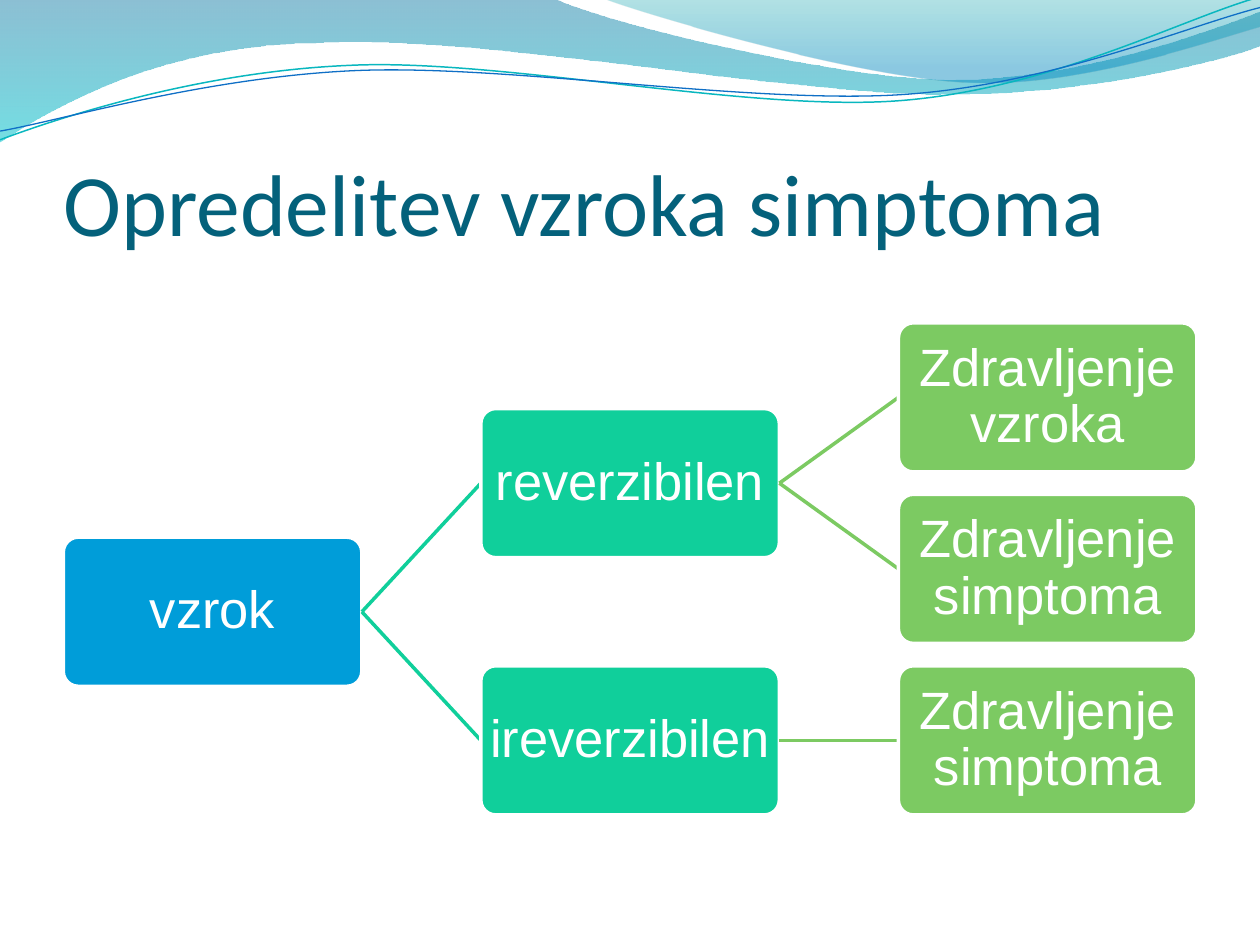
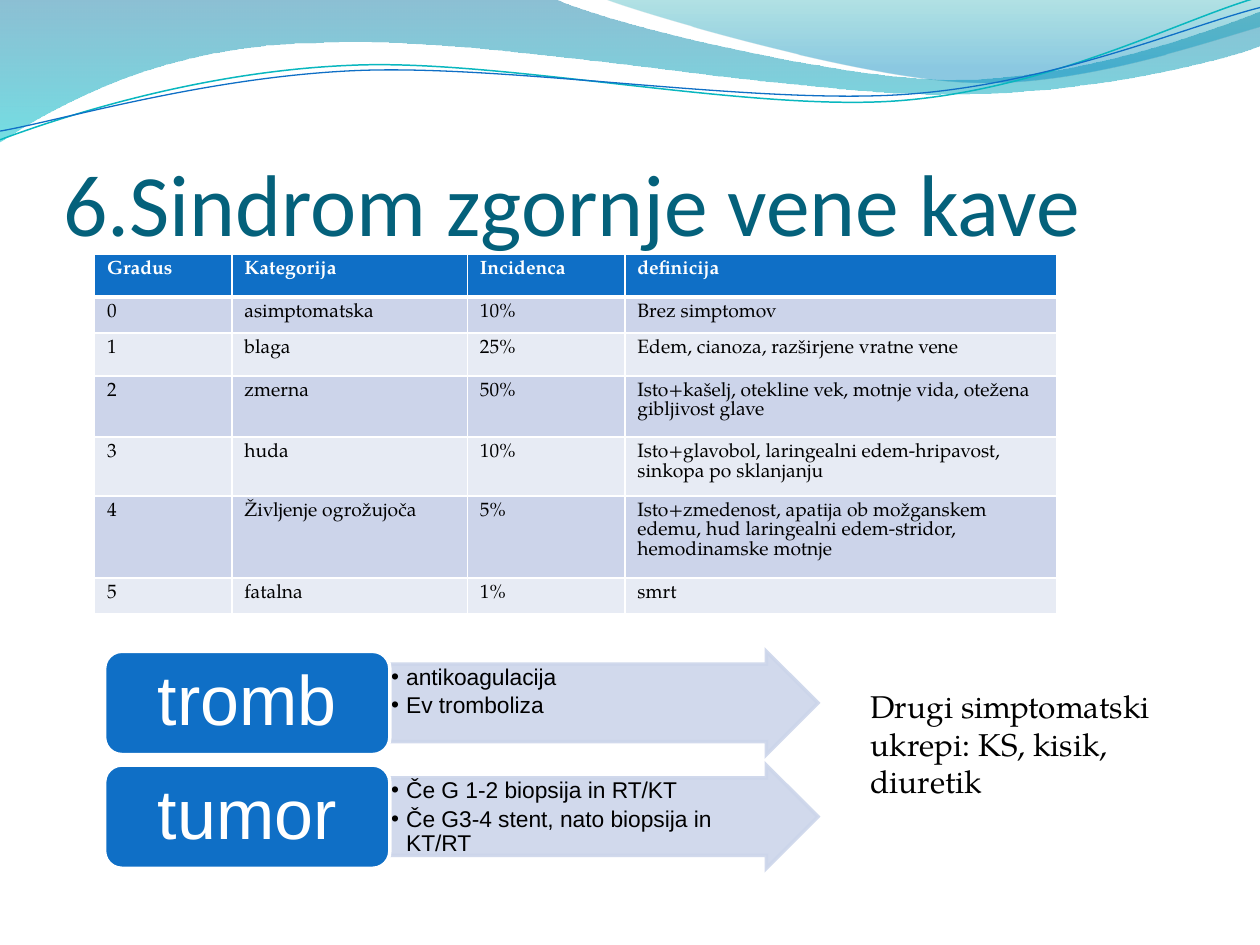
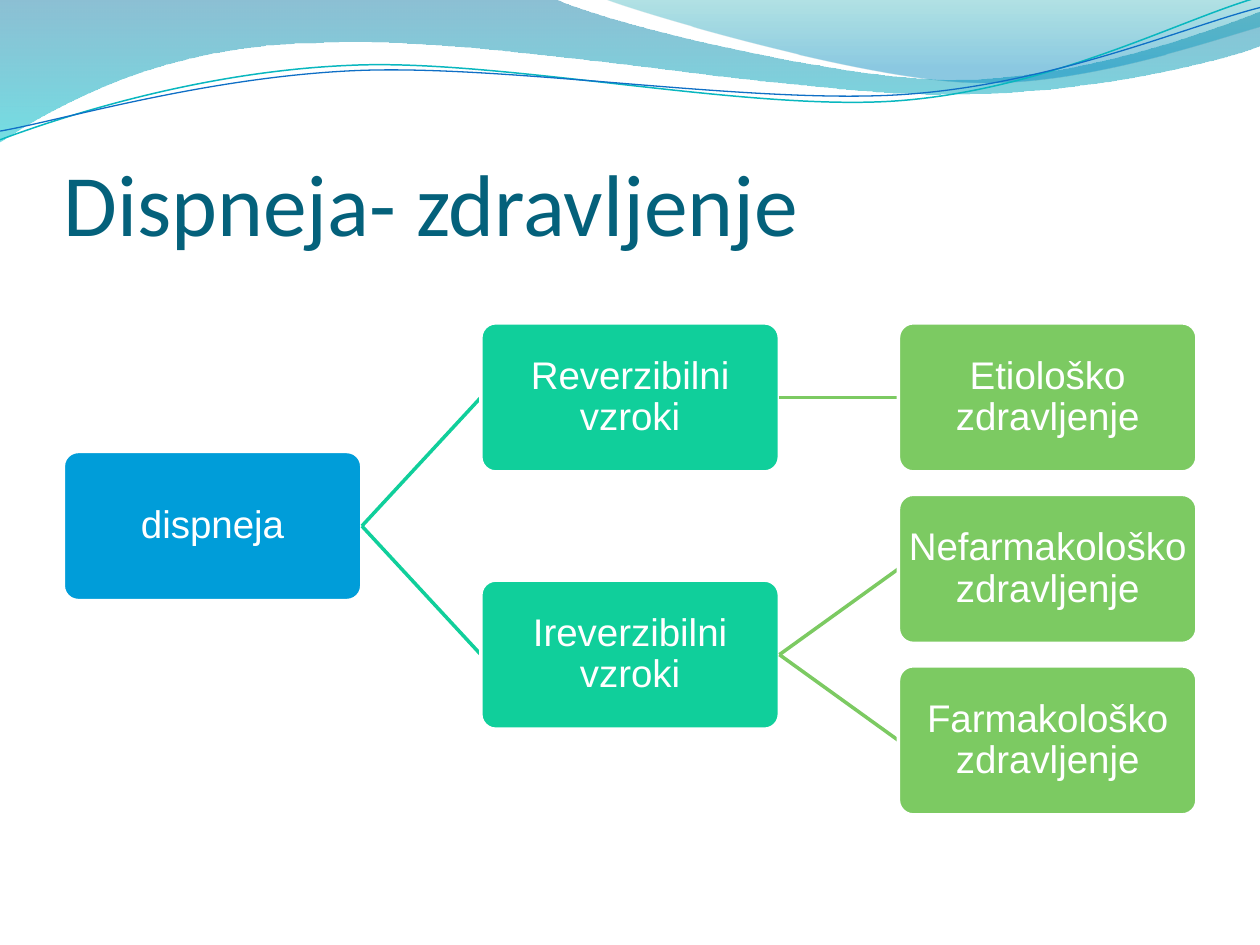
from dataclasses import dataclass

from lxml.etree import Element, SubElement
from pptx import Presentation
from pptx.dml.color import RGBColor
from pptx.enum.shapes import MSO_CONNECTOR, MSO_SHAPE
from pptx.enum.text import MSO_ANCHOR, PP_ALIGN
from pptx.oxml.ns import qn
from pptx.util import Pt


@dataclass(frozen=True)
class Theme:
    white: str = "FFFFFF"
    black: str = "000000"
    title: str = "04617B"
    blue: str = "0F6FC6"
    teal_line: str = "09B7BF"
    levels: tuple = ("009DD9", "10CF9B", "7CCA62")
    stripes: tuple = ("CCD4EA", "E7EBF4")
    arrow: str = "CCD5EA"
    title_font: str = "Calibri"
    body_font: str = "TeX Gyre Pagella"
    diagram_font: str = "Arial"
    title_size: float = 50
    table_size: float = 11
    note_size: float = 18
    cause_size: float = 40
    step_size: float = 13


THEME = Theme()

# A segment with one point is a straight line, with three points a Bézier curve.
BANDS = [
    {"start": (0, 0),
     "segments": [
         [(316.8, -0.7)],
         [(342.7, 12.2), (478.1, 45.4), (545.8, 45.4)],
         [(614.2, 45.4), (689.8, 18.7), (720, 6.5)],
         [(720.7, 25.9)],
         [(707.8, 31.7), (626.4, 54.7), (537.1, 54)],
         [(447.8, 54), (275, 20.2), (185, 24.5)],
         [(92.9, 25.2), (33.1, 59.8), (-0.7, 81.4)],
         [(0, 0)]],
     "stops": [(0, "0074A0", 45), (1, "00C4CD", 55)], "angle": 270},
    {"start": (344.9, -0.7),
     "segments": [
         [(366.5, 7.9), (491, 44.6), (553.7, 46.8)],
         [(616.3, 49.7), (691.9, 23), (720, 15.1)],
         [(720, 0)],
         [(344.9, -0.7)]],
     "stops": [(0.2, "008ABF", 45), (1, "00A0A8", 30)], "angle": 90},
]
RIPPLES = [
    {"start": (0, 79.9),
     "segments": [
         [(34.6, 67), (113.8, 41), (199.4, 37.4)],
         [(284.4, 33.1), (427, 64.1), (513.4, 57.6)],
         [(599.8, 51.1), (675.4, 10.8), (718.6, -1.4)]],
     "color": THEME.teal_line, "width": 0.85},
    {"start": (0, 74.9),
     "segments": [
         [(33.8, 69.1), (118.1, 43.9), (203.8, 40.3)],
         [(290.2, 36.7), (429.8, 59.8), (516.2, 54)],
         [(601.9, 48.2), (677.5, 15.1), (720, 4.3)]],
     "color": THEME.blue, "width": 0.75},
]

SYMPTOM_TREE = ("vzrok", [
    ("reverzibilen", ["Zdravljenje vzroka", "Zdravljenje simptoma"]),
    ("ireverzibilen", ["Zdravljenje simptoma"]),
])
DYSPNEA_TREE = ("dispneja", [
    ("Reverzibilni vzroki", ["Etiološko zdravljenje"]),
    ("Ireverzibilni vzroki", ["Nefarmakološko zdravljenje", "Farmakološko zdravljenje"]),
])
GRADES = [
    ("Gradus", "Kategorija", "Incidenca", "definicija"),
    ("0", "asimptomatska", "10%", "Brez simptomov"),
    ("1", "blaga", "25%", "Edem, cianoza, razširjene vratne vene"),
    ("2", "zmerna", "50%", "Isto+kašelj, otekline vek, motnje vida, otežena gibljivost glave"),
    ("3", "huda", "10%", "Isto+glavobol, laringealni edem-hripavost, sinkopa po sklanjanju"),
    ("4", "Življenje ogrožujoča", "5%",
     "Isto+zmedenost, apatija ob možganskem edemu, hud laringealni edem-stridor, "
     "hemodinamske motnje"),
    ("5", "fatalna", "1%", "smrt"),
]
GRADE_WIDTHS = [78.5, 134.6, 90, 247]
GRADE_HEIGHTS = [24.3, 18.2, 24.5, 35.1, 29.7, 45.4, 18]
CAUSES = [
    ("tromb", ["antikoagulacija", "Ev tromboliza"]),
    ("tumor", ["Če G 1-2 biopsija in RT/KT", "Če G3-4 stent, nato biopsija in KT/RT"]),
]
OTHER_MEASURES = "Drugi simptomatski ukrepi: KS, kisik, diuretik"

NODE_WIDTH, NODE_HEIGHT = 170.6, 85.2
TREE_LEFT, TREE_TOP = 36.2, 184.5
COLUMN_STEP, ROW_STEP = 238.6, 98


def rgb(color):
    return RGBColor.from_string(color)


def set_opacity(shape, percents):
    """Give the shape's colours, in document order, these opacities."""
    colors = shape._element.spPr.iter(qn("a:srgbClr"))
    for color, percent in zip(list(colors), percents):
        SubElement(color, qn("a:alpha"), val=str(percent * 1000))


def write_text(frame, lines, font, size, color, align=None, anchor=MSO_ANCHOR.TOP,
               insets=(7.2, 3.6, 7.2, 3.6), spacing=None, bullets=False):
    frame.word_wrap = True
    frame.vertical_anchor = anchor
    (frame.margin_left, frame.margin_top,
     frame.margin_right, frame.margin_bottom) = map(Pt, insets)
    for index, line in enumerate(lines):
        para = frame.add_paragraph() if index else frame.paragraphs[0]
        para.text = line
        para.alignment = align
        para.line_spacing = spacing
        if bullets:
            properties = para._p.get_or_add_pPr()
            properties.set("marL", str(Pt(8.6)))
            properties.set("indent", str(Pt(-8.6)))
            SubElement(properties, qn("a:buFont"), typeface=font)
            SubElement(properties, qn("a:buChar"), char="•")
            para.space_after = Pt(2)
        para.font.name = font
        para.font.size = Pt(size)
        para.font.color.rgb = rgb(color)


def add_text(page, place, lines, *style, **options):
    box = page.shapes.add_textbox(*map(Pt, place))
    write_text(box.text_frame, lines, *style, **options)


def add_block(page, kind, place, fill, line, adjustments=()):
    """Add a preset shape with a plain fill and a 2 pt mitred outline."""
    block = page.shapes.add_shape(kind, *map(Pt, place))
    block.shadow.inherit = False
    for index, value in enumerate(adjustments):
        block.adjustments[index] = value
    block.fill.solid()
    block.fill.fore_color.rgb = rgb(fill)
    block.line.color.rgb = rgb(line)
    block.line.width = Pt(2)
    SubElement(block.line._get_or_add_ln(), qn("a:miter"), lim="800000")
    return block


def add_outline(page, start, segments, close):
    """Draw straight steps between the end points, then bend the curved ones."""
    builder = page.shapes.build_freeform(*map(Pt, start))
    ends = [tuple(map(Pt, segment[-1])) for segment in segments]
    builder.add_line_segments(ends, close=close)
    outline = builder.convert_to_shape()
    outline.shadow.inherit = False
    steps = list(outline._element.spPr.iter(qn("a:lnTo")))
    for step, (*controls, _) in zip(steps, segments):
        if controls:
            step.tag = qn("a:cubicBezTo")
        for index, (x, y) in enumerate(controls):
            step.insert(index, Element(qn("a:pt"), x=str(Pt(x) - outline.left),
                                       y=str(Pt(y) - outline.top)))
    return outline


def add_waves(page):
    for band in BANDS:
        wave = add_outline(page, band["start"], band["segments"], True)
        wave.line.fill.background()
        wave.fill.gradient()
        wave.fill.gradient_angle = band["angle"]
        for stop, (position, color, _) in zip(wave.fill.gradient_stops, band["stops"]):
            stop.position = position
            stop.color.rgb = rgb(color)
        set_opacity(wave, [opacity for _, _, opacity in band["stops"]])
    for ripple in RIPPLES:
        wave = add_outline(page, ripple["start"], ripple["segments"], False)
        wave.fill.background()
        wave.line.color.rgb = rgb(ripple["color"])
        wave.line.width = Pt(ripple["width"])


def move_to_master(deck, page):
    """Hand the page's shapes to the slide master, so that every page shows them."""
    tree = deck.slide_master.shapes._spTree
    for index, shape in enumerate(list(page.shapes)):
        tree.insert(2 + index, shape._element)


def add_page(deck, title):
    page = deck.slides.add_slide(deck.slide_layouts[6])
    if len(deck.slides) == 1:
        add_waves(page)
        move_to_master(deck, page)
    add_text(page, (36.2, 55.4, 648, 90), [title], THEME.title_font, THEME.title_size,
             THEME.title, anchor=MSO_ANCHOR.BOTTOM, insets=(0, 3.6, 0, 0))
    return page


def add_node(page, text, level, row, size, parent_row=None):
    left = TREE_LEFT + level * COLUMN_STEP
    top = TREE_TOP + row * ROW_STEP
    color = THEME.levels[level]
    if parent_row is not None:
        middle = TREE_TOP + NODE_HEIGHT / 2
        link = page.shapes.add_connector(
            MSO_CONNECTOR.STRAIGHT,
            Pt(left - COLUMN_STEP + NODE_WIDTH), Pt(middle + parent_row * ROW_STEP),
            Pt(left), Pt(middle + row * ROW_STEP))
        link.line.color.rgb = rgb(color)
        link.line.width = Pt(2)
        SubElement(link._element.spPr, qn("a:effectLst"))
    node = add_block(page, MSO_SHAPE.ROUNDED_RECTANGLE, (left, top, NODE_WIDTH, NODE_HEIGHT),
                     color, THEME.white, [0.1])
    write_text(node.text_frame, [text], THEME.diagram_font, size, THEME.white,
               PP_ALIGN.CENTER, MSO_ANCHOR.MIDDLE, (1.4,) * 4, 0.9)


def add_tree(page, tree, size):
    """Place leaves on successive rows and centre each parent on its children."""
    root, branches = tree
    branch_rows, first_row = [], 0
    for _, leaves in branches:
        branch_rows.append(first_row + (len(leaves) - 1) / 2)
        first_row += len(leaves)
    root_row = sum(branch_rows) / len(branch_rows)
    add_node(page, root, 0, root_row, size)
    leaf_row = 0
    for (branch, leaves), branch_row in zip(branches, branch_rows):
        add_node(page, branch, 1, branch_row, size, root_row)
        for leaf in leaves:
            add_node(page, leaf, 2, leaf_row, size, branch_row)
            leaf_row += 1


def set_borders(cell, widths):
    properties = cell._tc.get_or_add_tcPr()
    for side, width in zip("LRTB", widths):
        border = SubElement(properties, qn(f"a:ln{side}"), w=str(Pt(width)))
        SubElement(SubElement(border, qn("a:solidFill")), qn("a:srgbClr"), val=THEME.white)


def add_grades(page):
    table = page.shapes.add_table(
        len(GRADES), len(GRADE_WIDTHS), Pt(54), Pt(145.5),
        Pt(sum(GRADE_WIDTHS)), Pt(sum(GRADE_HEIGHTS))).table
    table.horz_banding = False
    for column, width in zip(table.columns, GRADE_WIDTHS):
        column.width = Pt(width)
    thin, thick = 0.96, 3
    for index, (row, height, texts) in enumerate(zip(table.rows, GRADE_HEIGHTS, GRADES)):
        row.height = Pt(height)
        header = index == 0
        for cell, text in zip(row.cells, texts):
            set_borders(cell, (thin, thin, thick if index == 1 else thin,
                               thick if header else thin))
            cell.fill.solid()
            cell.fill.fore_color.rgb = rgb(THEME.blue if header
                                           else THEME.stripes[(index - 1) % 2])
            para = cell.text_frame.paragraphs[0]
            para.text = text
            para.font.name = THEME.body_font
            para.font.size = Pt(THEME.table_size)
            para.font.bold = header
            para.font.color.rgb = rgb(THEME.white if header else THEME.black)


def add_causes(page):
    left, top, width, height, step = 59.8, 372.2, 163, 59, 65
    for index, (cause, measures) in enumerate(CAUSES):
        row_top = top + index * step
        arrow = add_block(page, MSO_SHAPE.RIGHT_ARROW, (left + width, row_top, 244.6, height),
                          THEME.arrow, THEME.arrow, [0.75, 0.5])
        set_opacity(arrow, [90, 90])
        write_text(arrow.text_frame, measures, THEME.diagram_font, THEME.step_size, THEME.black,
                   PP_ALIGN.LEFT, insets=(0.7, 0.7, 16, 0.7), spacing=0.9, bullets=True)
        label = add_block(page, MSO_SHAPE.ROUNDED_RECTANGLE, (left, row_top, width, height),
                          THEME.blue, THEME.white)
        write_text(label.text_frame, [cause], THEME.diagram_font, THEME.cause_size, THEME.white,
                   PP_ALIGN.CENTER, MSO_ANCHOR.MIDDLE, (12, 6, 12, 6), 0.9)


def main():
    deck = Presentation()
    deck.slide_width, deck.slide_height = Pt(720), Pt(540)

    add_tree(add_page(deck, "Opredelitev vzroka simptoma"), SYMPTOM_TREE, 30)

    page = add_page(deck, "6.Sindrom zgornje vene kave")
    add_grades(page)
    add_causes(page)
    add_text(page, (490.4, 389, 187.2, 72), [OTHER_MEASURES],
             THEME.body_font, THEME.note_size, THEME.black)

    add_tree(add_page(deck, "Dispneja- zdravljenje"), DYSPNEA_TREE, 22)
    deck.save("out.pptx")


if __name__ == "__main__":
    main()
